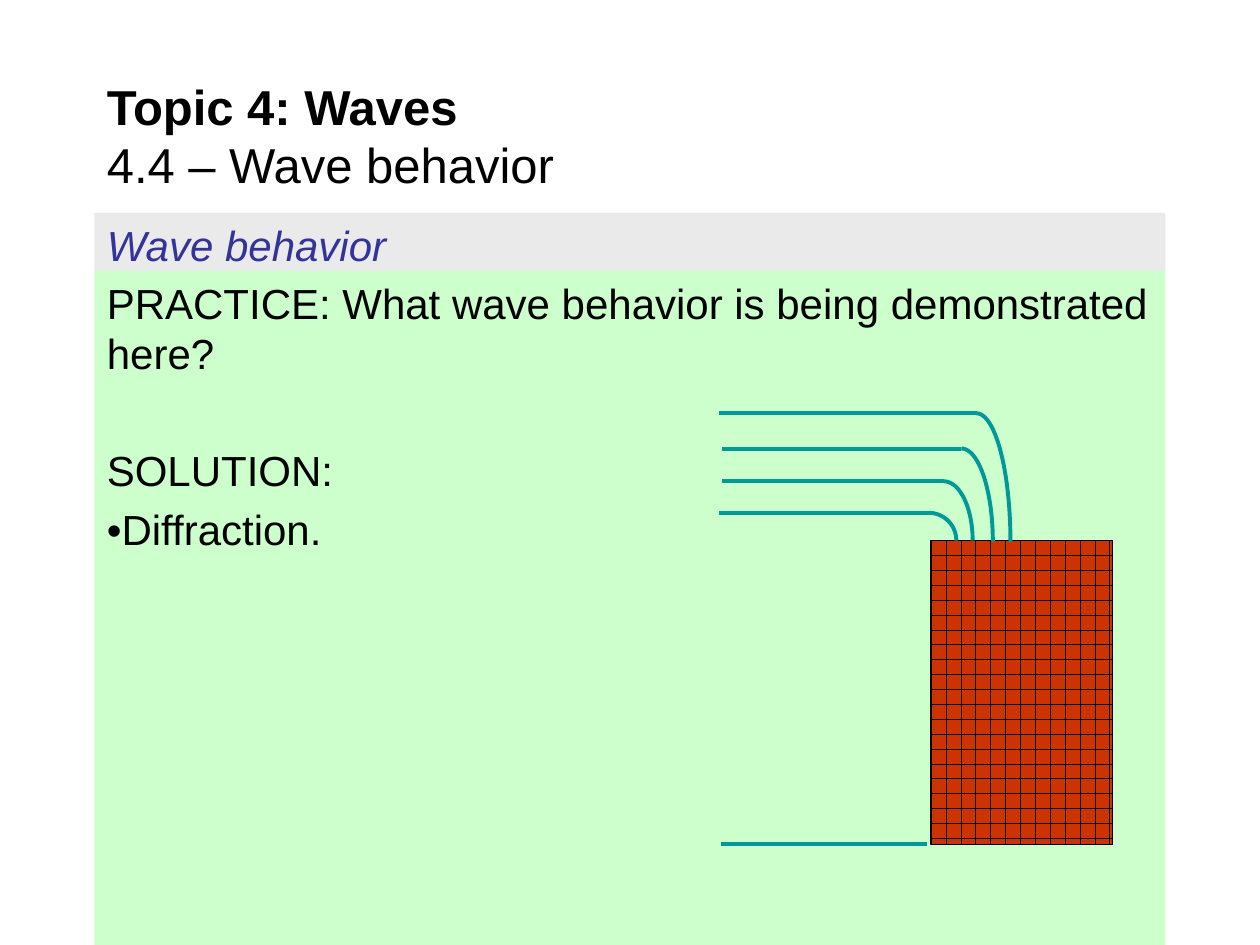
from math import cos, pi, sin

from lxml import etree
from pptx import Presentation
from pptx.dml.color import RGBColor
from pptx.enum.dml import MSO_PATTERN
from pptx.enum.shapes import MSO_CONNECTOR, MSO_SHAPE
from pptx.enum.text import MSO_ANCHOR, PP_ALIGN
from pptx.oxml.ns import qn
from pptx.util import Inches, Pt

RECTANGLE = MSO_SHAPE.RECTANGLE
STRAIGHT = MSO_CONNECTOR.STRAIGHT
BRICK = MSO_PATTERN.HORIZONTAL_BRICK
TOP, MIDDLE = MSO_ANCHOR.TOP, MSO_ANCHOR.MIDDLE
LEFT = PP_ALIGN.LEFT

BLACK = RGBColor(0x00, 0x00, 0x00)
INDIGO = RGBColor(0x33, 0x33, 0x99)
GRAY = RGBColor(0xEA, 0xEA, 0xEA)
MINT = RGBColor(0xCC, 0xFF, 0xCC)
RUST = RGBColor(0xCC, 0x33, 0x00)
TEAL = RGBColor(0x00, 0x99, 0x99)

MARGIN, CONTENT_WIDTH = 0.75, 8.5
ARC_STEPS = 24


class WaveSlide:
    """Draws the elements of a wave lesson in one shared style."""

    font_name = "Arial"
    wave_width = Pt(2.25)

    def __init__(self, slide):
        self.slide = slide

    def add_run(self, paragraph, text, size, color=BLACK, bold=False, italic=False):
        run = paragraph.add_run()
        run.text = text
        font = run.font
        font.name, font.size = self.font_name, Pt(size)
        font.bold, font.italic = bold, italic
        font.color.rgb = color

    def add_title(self, top, height, heading, subheading):
        shape = self.slide.shapes.add_textbox(
            Inches(MARGIN), Inches(top), Inches(CONTENT_WIDTH), Inches(height))
        frame = shape.text_frame
        frame.word_wrap = True
        frame.vertical_anchor = MIDDLE
        paragraph = frame.paragraphs[0]
        self.add_run(paragraph, heading, 28, bold=True)
        paragraph.add_line_break()
        self.add_run(paragraph, subheading, 28)

    def add_rectangle(self, left, top, width, height):
        shape = self.slide.shapes.add_shape(
            RECTANGLE, Inches(left), Inches(top), Inches(width), Inches(height))
        shape.shadow.inherit = False
        return shape

    def add_panel(self, top, height, fill, lines, color=BLACK, italic=False):
        shape = self.add_rectangle(MARGIN, top, CONTENT_WIDTH, height)
        shape.fill.solid()
        shape.fill.fore_color.rgb = fill
        shape.line.fill.background()
        frame = shape.text_frame
        frame.word_wrap = True
        frame.vertical_anchor = TOP
        for index, (text, space) in enumerate(lines):
            paragraph = frame.add_paragraph() if index else frame.paragraphs[0]
            paragraph.alignment = LEFT
            paragraph.space_before = Pt(space)
            self.add_run(paragraph, text, 24, color, italic=italic)

    def add_wall(self, left, top, width, height):
        shape = self.add_rectangle(left, top, width, height)
        shape.fill.patterned()
        shape.fill.pattern = BRICK
        shape.fill.fore_color.rgb = BLACK
        shape.fill.back_color.rgb = RUST
        shape.line.color.rgb = BLACK
        shape.line.width = Pt(0.75)

    def style_wave(self, shape):
        shape.line.color.rgb = TEAL
        shape.line.width = self.wave_width

    def add_wave_line(self, shapes, start, end, y):
        connector = shapes.add_connector(
            STRAIGHT, Inches(start), Inches(y), Inches(end), Inches(y))
        self.style_wave(connector)
        etree.SubElement(connector._element.spPr, qn("a:effectLst"))

    def add_bent_wave(self, start, bend, y, width, height):
        shapes = self.slide.shapes.add_group_shape().shapes
        self.add_wave_line(shapes, start, bend, y)
        angles = [step * pi / 2 / ARC_STEPS for step in range(ARC_STEPS + 1)]
        points = [(Inches(bend + width * sin(angle)),
                   Inches(y + height * (1 - cos(angle)))) for angle in angles]
        builder = shapes.build_freeform(*points[0])
        builder.add_line_segments(points[1:], close=False)
        arc = builder.convert_to_shape()
        arc.shadow.inherit = False
        arc.fill.background()
        self.style_wave(arc)


def main():
    presentation = Presentation()
    presentation.slide_width, presentation.slide_height = Inches(10), Inches(7.5)
    slide = presentation.slides.add_slide(presentation.slide_layouts[6])
    page = WaveSlide(slide)

    page.add_panel(1.69, 0.47, GRAY, [("Wave behavior", 4.8)], INDIGO, italic=True)
    page.add_title(0.58, 0.98, "Topic 4: Waves", "4.4 – Wave behavior")
    page.add_panel(2.15, 5.35, MINT, [
        ("PRACTICE: What wave behavior is being demonstrated here?", 4.8),
        ("SOLUTION:", 38),
        ("•Diffraction.", 4.8),
    ])
    page.add_wall(7.39, 4.29, 1.44, 2.41)
    page.add_wave_line(slide.shapes, 7.36, 5.72, 6.7)
    for start, bend, y, width, height in [
        (5.71, 7.37, 4.07, 0.22, 0.22),
        (5.73, 7.49, 3.82, 0.23, 0.47),
        (5.73, 7.63, 3.56, 0.25, 0.74),
        (5.71, 7.75, 3.28, 0.27, 1.02),
    ]:
        page.add_bent_wave(start, bend, y, width, height)
    presentation.save("out.pptx")


if __name__ == "__main__":
    main()
